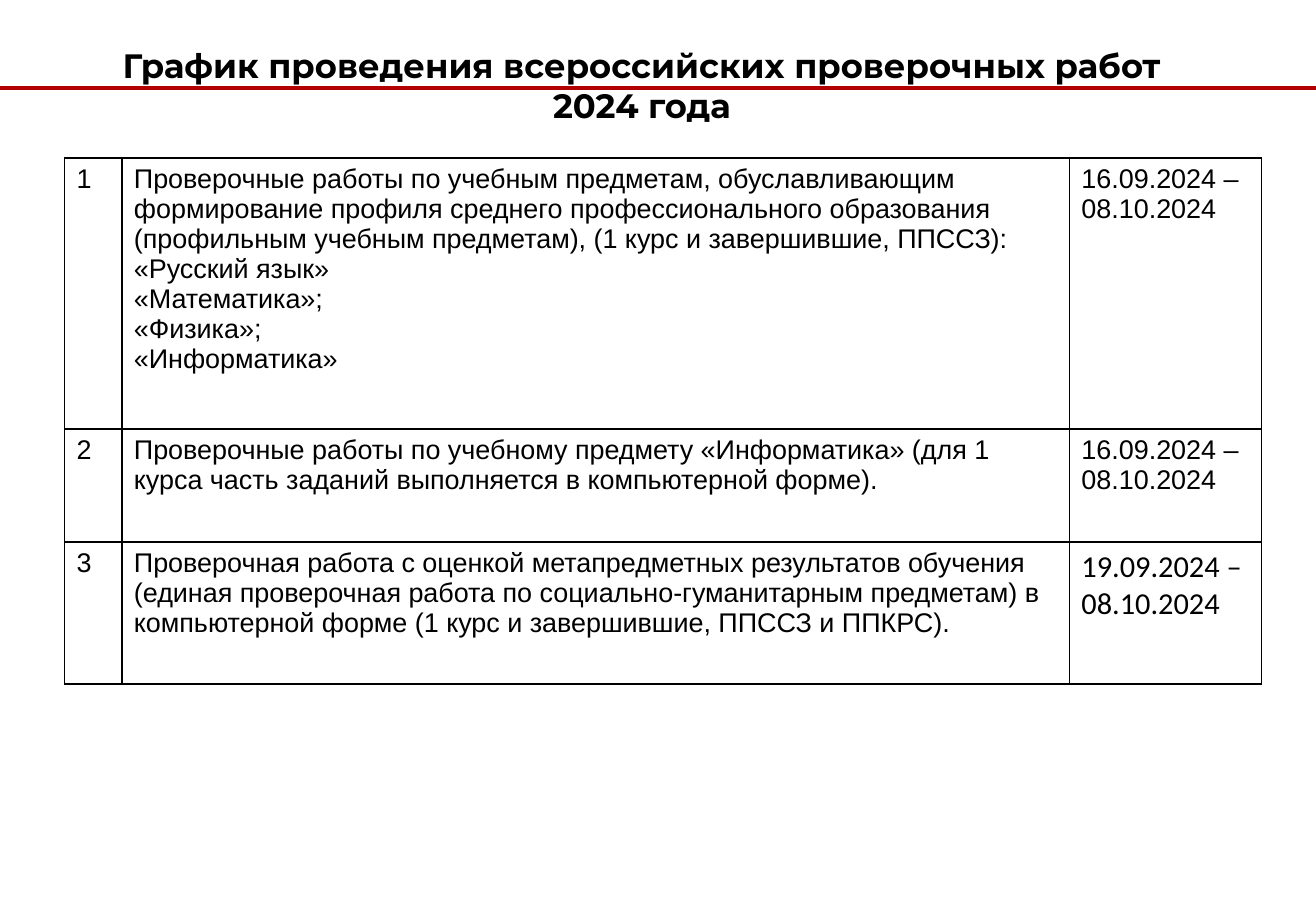
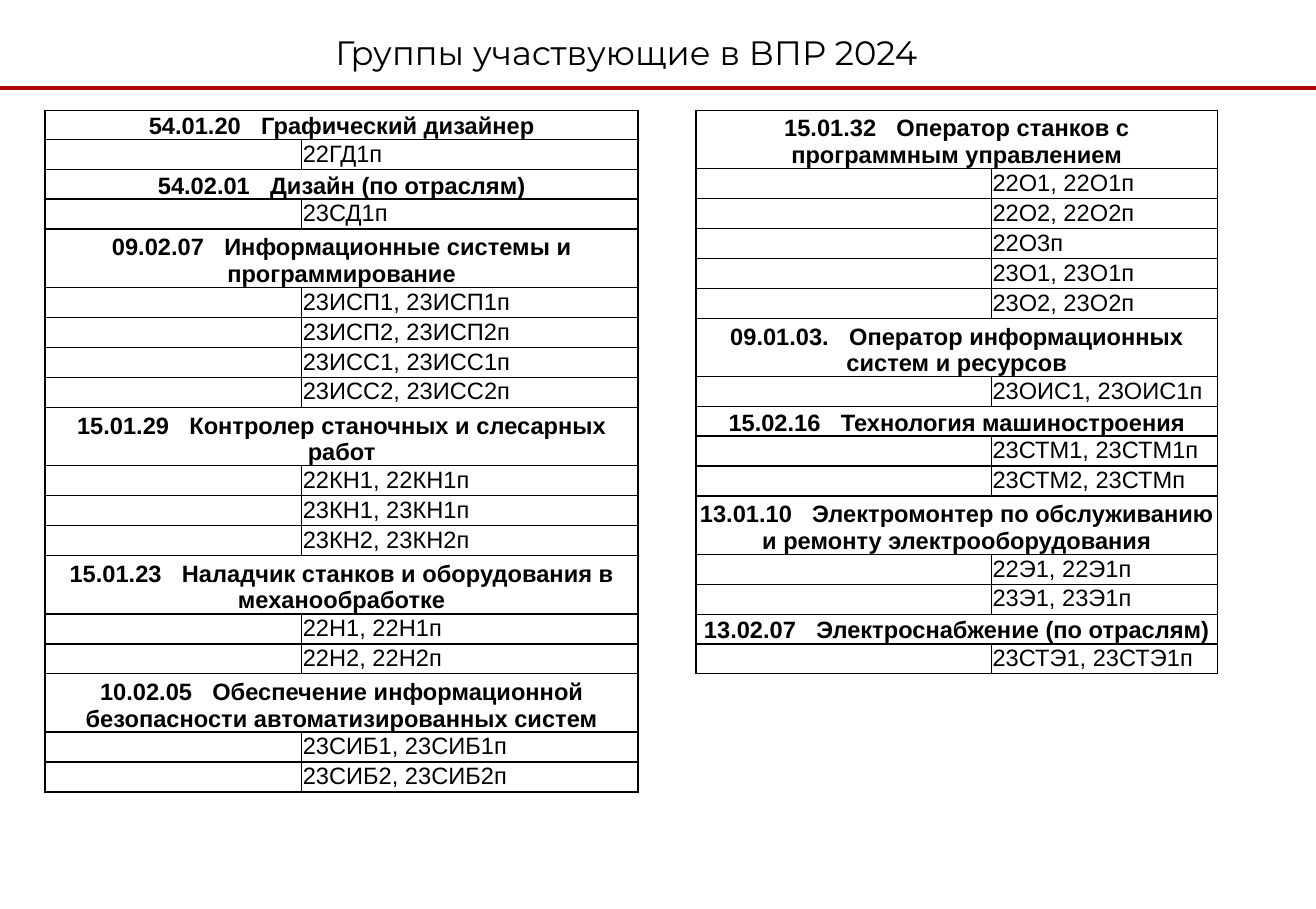
from lxml.etree import SubElement
from pptx import Presentation
from pptx.dml.color import RGBColor
from pptx.enum.shapes import MSO_CONNECTOR as Link
from pptx.enum.text import MSO_ANCHOR as Anchor, MSO_AUTO_SIZE as Fit, PP_ALIGN as Align
from pptx.oxml.ns import qn
from pptx.util import Pt

WIDTH, HEIGHT = 780, 538.6
BLACK, RED = "000000", "B00000"
hue = RGBColor.from_string


def put(frame, text, size=14, font="Arial", bold=False, align=Align.LEFT):
    """Write one paragraph per line; a bar in a line becomes a wide space."""
    for i, line in enumerate(text.split("\n")):
        para = frame.add_paragraph() if i else frame.paragraphs[0]
        para.alignment = align
        if not line:
            SubElement(para._p, qn("a:endParaRPr"), sz=str(size * 100))
        for part in filter(None, line.partition("|")):
            run = para.add_run()
            run.text = part.replace("|", " ")
            run.font.size, run.font.name, run.font.bold = Pt(size), font, bold
            run.font.color.rgb = hue(BLACK)
            if part == "|":
                run._r.get_or_add_rPr().set("spc", "800")


def grid(slide, left, top, cols, rows):
    """Add an unfilled table with black borders."""
    table = slide.shapes.add_table(len(rows), len(cols), Pt(left), Pt(top),
                                   Pt(sum(cols)), Pt(sum(rows))).table
    table.first_row = table.horz_banding = False
    for col, width in zip(table.columns, cols):
        col.width = Pt(width)
    for row, height in zip(table.rows, rows):
        row.height = Pt(height)
    for cell in table.iter_cells():
        props = cell._tc.get_or_add_tcPr()
        for side in ("lnL", "lnR", "lnT", "lnB"):
            edge = SubElement(props, qn(f"a:{side}"), w=str(Pt(1)))
            fill = SubElement(edge, qn("a:solidFill"))
            SubElement(fill, qn("a:srgbClr"), val=BLACK)
        cell.fill.background()
    return table


deck = Presentation()
deck.slide_width, deck.slide_height = Pt(WIDTH), Pt(HEIGHT)

# Titles
titles = [
    ("График проведения всероссийских проверочных работ 2024 года",
     (44, 0, 673, 78), True, Align.CENTER, Anchor.BOTTOM),
    ("Группы участвующие в ВПР 2024",
     (191.5, 14.5, 394, 32), False, Align.LEFT, Anchor.MIDDLE),
]
slides = []
for text, box, bold, align, anchor in titles:
    slide = deck.slides.add_slide(deck.slide_layouts[5])
    title = slide.shapes.title
    title.left, title.top, title.width, title.height = map(Pt, box)
    frame = title.text_frame
    frame.word_wrap, frame.auto_size = True, Fit.NONE
    frame.vertical_anchor = anchor
    put(frame, text, size=20, font="Montserrat", bold=bold, align=align)
    slides.append(slide)
plan, teams = slides

# Red rule, kept on the master
rule = plan.shapes.add_connector(Link.STRAIGHT, 0, Pt(52), Pt(WIDTH), Pt(52))
rule.line.color.rgb, rule.line.width = hue(RED), Pt(2.5)
SubElement(rule._element.spPr, qn("a:effectLst"))
deck.slide_master.shapes._spTree.append(rule._element)

# Schedule
works = [
    ("Проверочные работы по учебным предметам, обуславливающим формирование "
     "профиля среднего профессионального образования (профильным учебным "
     "предметам), (1 курс и завершившие, ППССЗ):\n«Русский язык»\n"
     "«Математика»;\n«Физика»;\n«Информатика»",
     "16.09.2024 – 08.10.2024", {"size": 16}),
    ("Проверочные работы по учебному предмету «Информатика» (для 1 курса "
     "часть заданий выполняется в компьютерной форме).",
     "16.09.2024 – 08.10.2024", {"size": 16}),
    ("Проверочная работа с оценкой метапредметных результатов обучения "
     "(единая проверочная работа по социально-гуманитарным предметам) в "
     "компьютерной форме (1 курс и завершившие, ППССЗ и ППКРС).",
     "19.09.2024 – 08.10.2024", {"size": 18, "font": "Calibri"}),
]
table = grid(plan, 38.2, 93.6, [34, 561.6, 113.8], [160.6, 67, 84.2])
for i, (work, dates, style) in enumerate(works):
    put(table.cell(i, 0).text_frame, str(i + 1), size=16)
    put(table.cell(i, 1).text_frame, work, size=16)
    put(table.cell(i, 2).text_frame, dates, **style)

# Groups by trade: code, name, groups
first = [
    ("54.01.20", "Графический дизайнер", ["22ГД1п"]),
    ("54.02.01", "Дизайн (по отраслям)", ["23СД1п"]),
    ("09.02.07", "Информационные системы и программирование",
     ["23ИСП1, 23ИСП1п", "23ИСП2, 23ИСП2п", "23ИСС1, 23ИСС1п", "23ИСС2, 23ИСС2п"]),
    ("15.01.29", "Контролер станочных и слесарных работ",
     ["22КН1, 22КН1п", "23КН1, 23КН1п", "23КН2, 23КН2п"]),
    ("15.01.23", "Наладчик станков и оборудования в механообработке",
     ["22Н1, 22Н1п", "22Н2, 22Н2п"]),
    ("10.02.05", "Обеспечение информационной безопасности автоматизированных систем",
     ["23СИБ1, 23СИБ1п", "23СИБ2, 23СИБ2п"]),
]
second = [
    ("15.01.32", "Оператор станков с программным управлением",
     ["22О1, 22О1п", "22О2, 22О2п", "22О3п", "23О1, 23О1п", "23О2, 23О2п"]),
    ("09.01.03.", "Оператор информационных систем и ресурсов", ["23ОИС1, 23ОИС1п"]),
    ("15.02.16", "Технология машиностроения", ["23СТМ1, 23СТМ1п", "23СТМ2, 23СТМп"]),
    ("13.01.10", "Электромонтер по обслуживанию и ремонту электрооборудования",
     ["22Э1, 22Э1п", "23Э1, 23Э1п"]),
    ("13.02.07", "Электроснабжение (по отраслям)", ["23СТЭ1, 23СТЭ1п"]),
]
ONE, TWO = 17.5, 34.6  # row heights for one and two lines
LONG = 30  # longest name that fits on one line

for left, cols, trades in ((26.8, [152, 199.5], first), (412.6, [175, 134], second)):
    rows = []
    for code, name, groups in trades:
        rows.append((f"{code}|{name}", True, TWO if len(name) > LONG else ONE))
        rows += [(group, False, ONE) for group in groups]
    table = grid(teams, left, 65.3, cols, [high for _, _, high in rows])
    for cell in table.iter_cells():
        cell.margin_left = cell.margin_right = cell.margin_top = Pt(0.7)
        cell.margin_bottom = 0
    for i, (text, head, _) in enumerate(rows):
        start, end = table.cell(i, 0), table.cell(i, 1)
        if head:
            start.merge(end)
            start.vertical_anchor = Anchor.BOTTOM
            put(start.text_frame, text, bold=True, align=Align.CENTER)
            put(end.text_frame, "")
        else:
            put(start.text_frame, "")
            put(end.text_frame, text)

deck.save("out.pptx")
